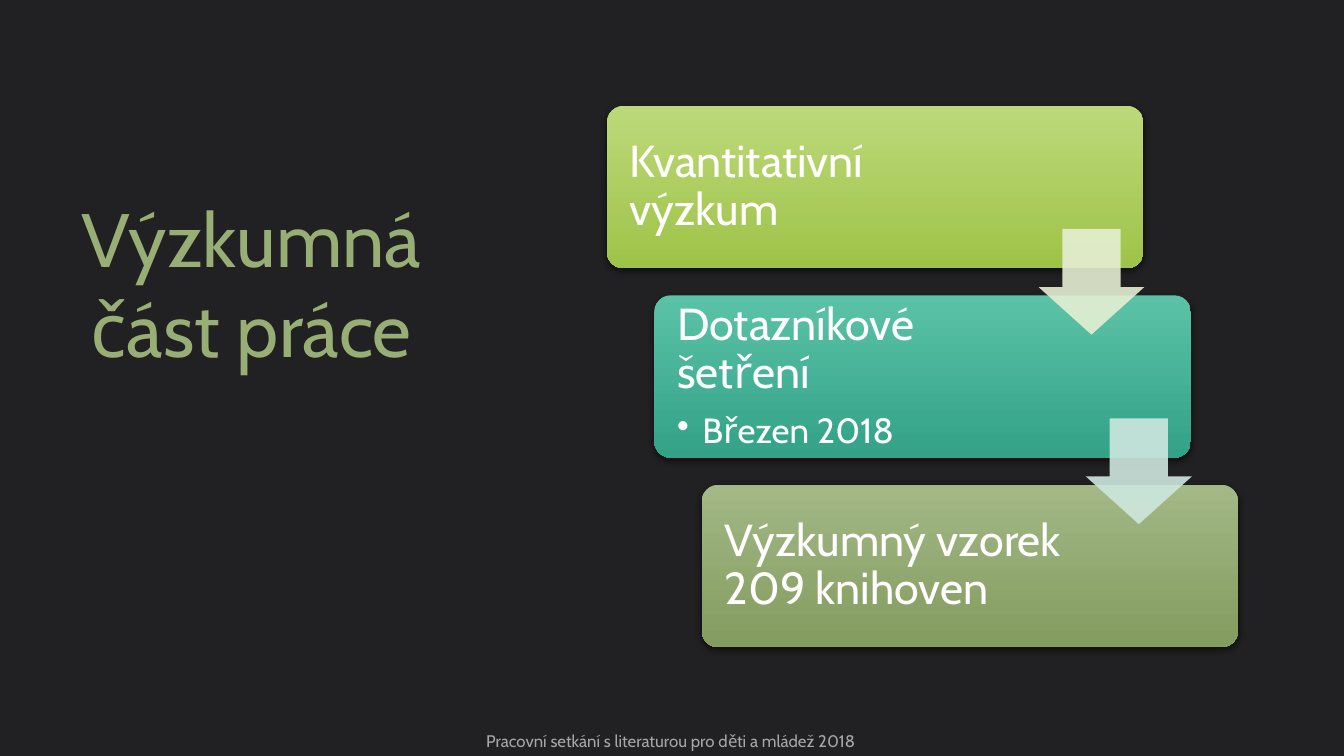
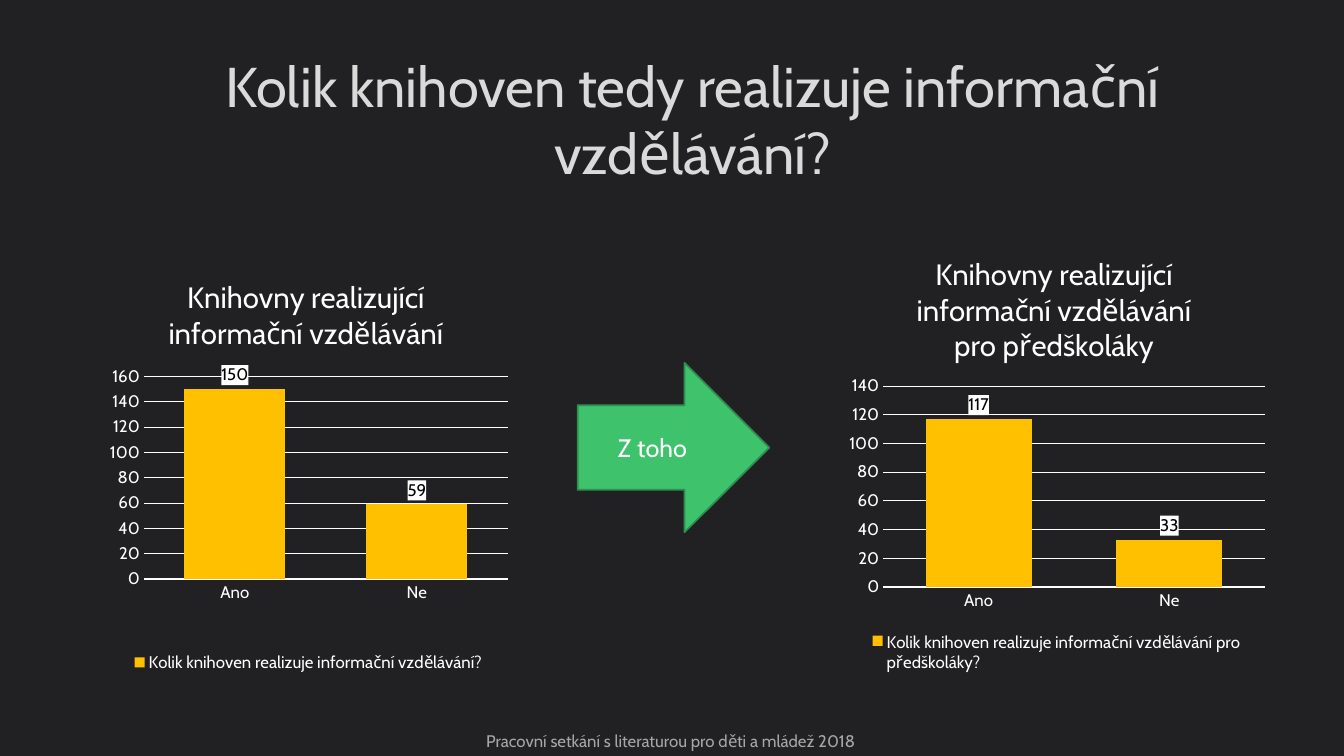
from lxml.etree import SubElement
from pptx import Presentation
from pptx.chart.data import CategoryChartData
from pptx.dml.color import RGBColor
from pptx.enum.chart import XL_CHART_TYPE, XL_LABEL_POSITION, XL_LEGEND_POSITION, XL_TICK_MARK
from pptx.enum.shapes import MSO_SHAPE
from pptx.enum.text import MSO_ANCHOR, PP_ALIGN
from pptx.oxml import parse_xml
from pptx.oxml.ns import nsdecls, qn
from pptx.util import Pt

PX = 9144
FONT = "Cabin"
COLORS = {
    "background": "212123", "white": "FFFFFF", "black": "000000",
    "sage": "97AF75", "silver": "DADADA", "footer": "A6A6A6",
    "bar": "FFC000", "arrow": "3EC26C", "arrow_edge": "2E9050",
}
FOOTER = "Pracovní setkání s literaturou pro děti a mládež 2018"

RESEARCH_TITLE = "Výzkumná část práce"
STEPS = [
    {"text": "Kvantitativní výzkum", "detail": None, "shades": ("BCD97A", "9FC348"), "next": "E5EFD3"},
    {"text": "Dotazníkové šetření", "detail": "Březen 2018", "shades": ("5AC2A7", "33A287"), "next": "CEE7DF"},
    {"text": "Výzkumný vzorek 209 knihoven", "detail": None, "shades": ("A3B886", "839C5F"), "next": None},
]
CARD_START, CARD_STEP, CARD_SIZE = (602, 105), (47, 188), (532, 161)
DOWN_OFFSET, DOWN_SIZE = (428, 122), (105, 105)

LIBRARIES_TITLE = "Kolik knihoven tedy realizuje informační vzdělávání?"
TRANSITION = "Z toho"
ANSWERS = ("Ano", "Ne")
SURVEYS = [
    {"title": "Knihovny realizující\ninformační vzdělávání",
     "series": "Kolik knihoven realizuje informační vzdělávání?",
     "values": (150, 59), "top": 160, "box": (91, 252, 430, 419),
     "plot": (0.12, 0.29, 0.84, 0.48), "title_at": (0.17, 0.05)},
    {"title": "Knihovny realizující\ninformační vzdělávání\npro předškoláky",
     "series": "Kolik knihoven realizuje informační vzdělávání pro předškoláky?",
     "values": (117, 33), "top": 140, "box": (833, 228, 430, 443),
     "plot": (0.1, 0.35, 0.88, 0.45), "title_at": (0.17, 0.05)},
]


def px(*lengths):
    return [length * PX for length in lengths]


def rgb(value):
    return RGBColor.from_string(COLORS.get(value, value))


def style(font, size, color):
    font.name, font.size, font.bold = FONT, Pt(size), False
    font.color.rgb = rgb(color)


def shadow_xml(blur, distance, angle, alpha):
    return parse_xml(
        f'<a:effectLst {nsdecls("a")}><a:outerShdw blurRad="{Pt(blur)}" dist="{Pt(distance)}" '
        f'dir="{angle * 60000}" algn="t" rotWithShape="0"><a:srgbClr val="000000">'
        f'<a:alpha val="{alpha * 1000}"/></a:srgbClr></a:outerShdw></a:effectLst>')


def add_text(slide, box, text, size, color, anchor):
    label = slide.shapes.add_textbox(*px(*box))
    frame = label.text_frame
    frame.word_wrap, frame.vertical_anchor = True, anchor
    frame.text = text
    paragraph = frame.paragraphs[0]
    paragraph.alignment = PP_ALIGN.CENTER
    style(paragraph.runs[0].font, size, color)
    return paragraph.runs[0]


def add_title(slide, box, text, size, color, anchor):
    title = add_text(slide, box, text, size, color, anchor)
    title.font.fill._xPr.find(qn("a:solidFill")).addnext(shadow_xml(4, 3, 45, 60))


def add_base_slide(deck):
    slide = deck.slides.add_slide(deck.slide_layouts[6])
    slide.background.fill.solid()
    slide.background.fill.fore_color.rgb = rgb("background")
    add_text(slide, (-1, 710, 1333, 40), FOOTER, 12, "footer", MSO_ANCHOR.BOTTOM)
    return slide


def add_flat_shape(slide, kind, box, color):
    shape = slide.shapes.add_shape(kind, *px(*box))
    shape.shadow.inherit = False
    shape.fill.solid()
    shape.fill.fore_color.rgb = rgb(color)
    shape.line.fill.background()
    return shape


def add_card(slide, step, left, top):
    card = add_flat_shape(slide, MSO_SHAPE.ROUNDED_RECTANGLE, (left, top, *CARD_SIZE), step["shades"][0])
    card.adjustments[0] = 0.1
    card.fill.gradient()
    card.fill.gradient_angle = 270
    for stop, position, shade in zip(card.fill.gradient_stops, (0, 1), step["shades"]):
        stop.position, stop.color.rgb = position, rgb(shade)
    effects = card._element.spPr.find(qn("a:effectLst"))
    effects.getparent().replace(effects, shadow_xml(5, 2, 90, 60))
    frame = card.text_frame
    frame.word_wrap, frame.vertical_anchor = True, MSO_ANCHOR.MIDDLE
    frame.margin_left, frame.margin_right = px(18, 170)
    frame.text = "\n".join(filter(None, (step["text"], step["detail"])))
    for paragraph, size, gap in zip(frame.paragraphs, (32, 25), (11, 4)):
        paragraph.alignment, paragraph.line_spacing = PP_ALIGN.LEFT, 0.9
        paragraph.space_after = Pt(gap)
        style(paragraph.runs[0].font, size, "white")
    if step["detail"]:
        properties = frame.paragraphs[1]._p.get_or_add_pPr()
        properties.set("marL", str(25 * PX))
        properties.set("indent", str(-25 * PX))
        SubElement(properties, qn("a:buChar")).set("char", "•")


def add_down_arrow(slide, color, left, top):
    arrow = add_flat_shape(slide, MSO_SHAPE.DOWN_ARROW, (left, top, *DOWN_SIZE), color)
    arrow.adjustments[0], arrow.adjustments[1] = 0.55, 0.45
    shade = arrow._element.spPr.find(qn("a:solidFill"))[0]
    SubElement(shade, qn("a:alpha")).set("val", "90000")


def layout_xml(names, values, inner=False):
    target = '<c:layoutTarget val="inner"/>' if inner else ""
    modes = "".join(f'<c:{name}Mode val="edge"/>' for name in "xy")
    places = "".join(f'<c:{name} val="{value}"/>' for name, value in zip(names, values))
    return parse_xml(f'<c:layout {nsdecls("c")}><c:manualLayout>{target}{modes}{places}'
                     '</c:manualLayout></c:layout>')


def set_layout(parent, layout, before):
    for old in parent.findall(qn("c:layout")):
        parent.remove(old)
    if before is None:
        parent.insert(0, layout)
    else:
        before.addnext(layout)


def style_axes(chart, top):
    for axis in (chart.category_axis, chart.value_axis):
        axis.major_tick_mark = axis.minor_tick_mark = XL_TICK_MARK.NONE
        style(axis.tick_labels.font, 12, "white")
    baseline = chart.category_axis.format.line
    baseline.color.rgb, baseline.width = rgb("white"), Pt(1.25)
    scale = chart.value_axis
    scale.minimum_scale, scale.maximum_scale, scale.major_unit = 0, top, 20
    scale.format.line.fill.background()
    grid = scale.major_gridlines.format.line
    grid.color.rgb, grid.width = rgb("white"), Pt(0.75)


def add_survey(slide, survey):
    data = CategoryChartData()
    data.categories = ANSWERS
    data.add_series(survey["series"], survey["values"])
    chart = slide.shapes.add_chart(XL_CHART_TYPE.COLUMN_CLUSTERED, *px(*survey["box"]), data).chart
    style(chart.font, 10, "white")
    chart._chartSpace.find(qn("c:chart")).addnext(parse_xml(
        f'<c:spPr {nsdecls("c", "a")}><a:noFill/><a:ln><a:noFill/></a:ln></c:spPr>'))

    heading = chart.chart_title
    heading.text_frame.text = survey["title"]
    for paragraph in heading.text_frame.paragraphs:
        paragraph.alignment = PP_ALIGN.CENTER
        style(paragraph.runs[0].font, 21, "white")
    heading.include_in_layout = False
    title = heading._element
    set_layout(title, layout_xml("xy", survey["title_at"]), title.find(qn("c:tx")))
    area = chart._chartSpace.find(qn("c:chart")).find(qn("c:plotArea"))
    set_layout(area, layout_xml("xywh", survey["plot"], inner=True), None)

    style_axes(chart, survey["top"])
    chart.has_legend = True
    chart.legend.position = XL_LEGEND_POSITION.BOTTOM
    chart.legend.include_in_layout = False
    style(chart.legend.font, 12, "white")

    plot = chart.plots[0]
    plot.vary_by_categories, plot.gap_width, plot.overlap = False, 80, 25
    bars = plot.series[0]
    bars.format.fill.solid()
    bars.format.fill.fore_color.rgb = rgb("bar")
    labels = bars.data_labels
    labels.show_value, labels.position = True, XL_LABEL_POSITION.OUTSIDE_END
    style(labels.font, 12, "black")
    labels._element.find(qn("c:txPr")).addprevious(parse_xml(
        f'<c:spPr {nsdecls("c", "a")}><a:solidFill><a:srgbClr val="{COLORS["white"]}"/>'
        '</a:solidFill></c:spPr>'))


def build_research(deck):
    slide = add_base_slide(deck)
    add_title(slide, (70, 185, 358, 435), RESEARCH_TITLE, 54, "sage", MSO_ANCHOR.TOP)
    corners = [[start + index * step for start, step in zip(CARD_START, CARD_STEP)]
               for index in range(len(STEPS))]
    for step, corner in zip(STEPS, corners):
        add_card(slide, step, *corner)
    for step, corner in zip(STEPS, corners):
        if step["next"]:
            add_down_arrow(slide, step["next"], *map(sum, zip(corner, DOWN_OFFSET)))


def build_libraries(deck):
    slide = add_base_slide(deck)
    add_title(slide, (89, 49, 1196, 138), LIBRARIES_TITLE, 40, "silver", MSO_ANCHOR.MIDDLE)
    for survey in SURVEYS:
        add_survey(slide, survey)
    arrow = add_flat_shape(slide, MSO_SHAPE.RIGHT_ARROW, (573, 360, 190, 168), "arrow")
    arrow.line.color.rgb, arrow.line.width = rgb("arrow_edge"), Pt(1.25)
    frame = arrow.text_frame
    frame.text, frame.vertical_anchor = TRANSITION, MSO_ANCHOR.MIDDLE
    frame.paragraphs[0].alignment = PP_ALIGN.CENTER
    style(frame.paragraphs[0].runs[0].font, 18, "white")


def main():
    """Build the two research slides and save the deck."""
    deck = Presentation()
    deck.slide_width, deck.slide_height = px(1333, 750)
    build_research(deck)
    build_libraries(deck)
    deck.save("out.pptx")


if __name__ == "__main__":
    main()
